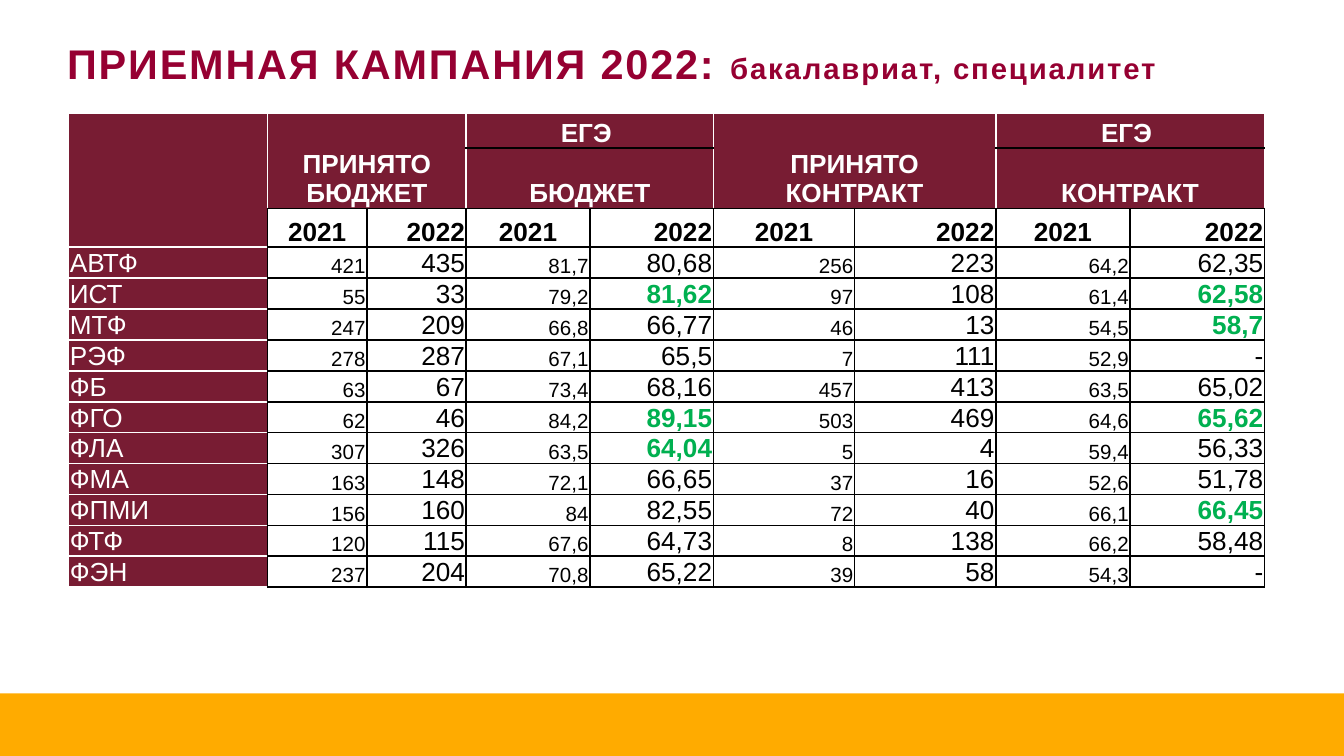
from lxml.etree import SubElement
from pptx import Presentation
from pptx.dml.color import RGBColor
from pptx.enum.shapes import MSO_SHAPE
from pptx.enum.text import MSO_ANCHOR, MSO_AUTO_SIZE, PP_ALIGN
from pptx.oxml.ns import qn
from pptx.util import Inches, Pt

THEME = {
    "font": "Arial",
    "title": RGBColor.from_string("960032"),
    "maroon": RGBColor.from_string("781C33"),
    "bar": RGBColor.from_string("FFAB00"),
    "growth": RGBColor.from_string("00B050"),
    "white": RGBColor.from_string("FFFFFF"),
    "black": RGBColor.from_string("000000"),
    "title_size": Pt(22.2),
    "subtitle_size": Pt(15.7),
    "main_size": Pt(14),
    "previous_size": Pt(11),
}

# top row, left column, bottom row, right column, lines of text
HEADERS = [
    (0, 0, 2, 0, [""]),
    (0, 1, 1, 2, ["ПРИНЯТО БЮДЖЕТ"]),
    (0, 3, 0, 4, ["ЕГЭ "]),
    (1, 3, 1, 4, ["БЮДЖЕТ"]),
    (0, 5, 1, 6, ["ПРИНЯТО", "КОНТРАКТ"]),
    (0, 7, 0, 8, ["ЕГЭ "]),
    (1, 7, 1, 8, ["КОНТРАКТ"]),
]
# * marks a highlighted exam score
FACULTIES = [
    ("АВТФ", "421 435 81,7 80,68 256 223 64,2 62,35"),
    ("ИСТ", "55 33 79,2 *81,62 97 108 61,4 *62,58"),
    ("МТФ", "247 209 66,8 66,77 46 13 54,5 *58,7"),
    ("РЭФ", "278 287 67,1 65,5 7 111 52,9 -"),
    ("ФБ", "63 67 73,4 68,16 457 413 63,5 65,02"),
    ("ФГО", "62 46 84,2 *89,15 503 469 64,6 *65,62"),
    ("ФЛА", "307 326 63,5 *64,04 5 4 59,4 56,33"),
    ("ФМА", "163 148 72,1 66,65 37 16 52,6 51,78"),
    ("ФПМИ", "156 160 84 82,55 72 40 66,1 *66,45"),
    ("ФТФ", "120 115 67,6 64,73 8 138 66,2 58,48"),
    ("ФЭН", "237 204 70,8 65,22 39 58 54,3 -"),
]
COLUMN_WIDTHS = [1.48, 0.74, 0.74, 0.92, 0.92, 1.05, 1.05, 1, 1]
ROW_HEIGHTS = [0.26, 0.45, 0.29] + [0.23] * len(FACULTIES)


def add_styled_run(paragraph, text, size, color, bold=False):
    run = paragraph.add_run()
    run.text = text
    run.font.name = THEME["font"]
    run.font.size = size
    run.font.color.rgb = color
    run.font.bold = bold
    return run


def style_cell(cell, fill=None, borders=("black",) * 4):
    """Set fill, insets and the left, right, top and bottom borders."""
    cell.vertical_anchor = MSO_ANCHOR.BOTTOM
    cell.margin_left = cell.margin_right = cell.margin_top = Inches(0.01)
    cell.margin_bottom = 0
    properties = cell._tc.get_or_add_tcPr()
    for side, color in zip("LRTB", borders):
        line = SubElement(properties, qn(f"a:ln{side}"), w=str(Pt(1)))
        solid = SubElement(line, qn("a:solidFill"))
        SubElement(solid, qn("a:srgbClr"), val=str(THEME[color]))
    if fill is None:
        cell.fill.background()
    else:
        cell.fill.solid()
        cell.fill.fore_color.rgb = fill


prs = Presentation()
prs.slide_width, prs.slide_height = Inches(10), Inches(10 * 9 / 16)
slide = prs.slides.add_slide(prs.slide_layouts[5])

bar_top = Inches(5.16)
bottom_bar = slide.shapes.add_shape(
    MSO_SHAPE.RECTANGLE, 0, bar_top, prs.slide_width, prs.slide_height - bar_top)
bottom_bar.shadow.inherit = False
bottom_bar.fill.solid()
bottom_bar.fill.fore_color.rgb = THEME["bar"]
bottom_bar.line.fill.background()

# Admission table
admissions = slide.shapes.add_table(
    len(ROW_HEIGHTS), len(COLUMN_WIDTHS), Inches(0.51), Inches(0.84),
    Inches(sum(COLUMN_WIDTHS)), Inches(sum(ROW_HEIGHTS))).table
admissions.first_row = admissions.horz_banding = False
for column, width in zip(admissions.columns, COLUMN_WIDTHS):
    column.width = Inches(width)
for row, height in zip(admissions.rows, ROW_HEIGHTS):
    row.height = Inches(height)

for top, left, bottom, right, lines in HEADERS:
    header = admissions.cell(top, left)
    header.merge(admissions.cell(bottom, right))
    style_cell(header, THEME["maroon"], (
        "white", "white",
        "white" if top == 0 else "black",
        "white" if left == 0 else "black"))
    caption = header.text_frame.paragraphs[0]
    caption.alignment = PP_ALIGN.CENTER
    caption.font.size = THEME["main_size"]
    for number, line_text in enumerate(lines):
        if number:
            caption.add_line_break()
        if line_text:
            add_styled_run(caption, line_text, THEME["main_size"], THEME["white"], True)

for col in range(1, len(COLUMN_WIDTHS)):
    year = admissions.cell(2, col)
    style_cell(year)
    caption = year.text_frame.paragraphs[0]
    caption.alignment = PP_ALIGN.CENTER if col % 2 else PP_ALIGN.RIGHT
    add_styled_run(caption, "2021" if col % 2 else "2022",
                   THEME["main_size"], THEME["black"], True)

for row, (faculty, figures) in enumerate(FACULTIES, start=3):
    label = admissions.cell(row, 0)
    style_cell(label, THEME["maroon"], ("white", "black", "white", "white"))
    add_styled_run(label.text_frame.paragraphs[0], faculty,
                   THEME["main_size"], THEME["white"])
    for col, figure in enumerate(figures.split(), start=1):
        value = admissions.cell(row, col)
        style_cell(value)
        paragraph = value.text_frame.paragraphs[0]
        paragraph.alignment = PP_ALIGN.RIGHT
        highlighted = figure.startswith("*")
        add_styled_run(paragraph, figure.lstrip("*"),
                       THEME["previous_size" if col % 2 else "main_size"],
                       THEME["growth" if highlighted else "black"], highlighted)

# Title
title = slide.shapes.title
title.left, title.top = Inches(0.4), Inches(0.08)
title.width, title.height = Inches(8.9), Inches(0.71)
heading = title.text_frame
heading.word_wrap = True
heading.auto_size = MSO_AUTO_SIZE.NONE
heading.vertical_anchor = MSO_ANCHOR.MIDDLE
heading.margin_top = Inches(0.12)
heading.paragraphs[0].alignment = PP_ALIGN.LEFT
for text, size in [("ПРИЕМНАЯ КАМПАНИЯ 2022: ", "title_size"),
                   ("бакалавриат, специалитет", "subtitle_size")]:
    run = add_styled_run(heading.paragraphs[0], text, THEME[size], THEME["title"], True)
    run.font._element.set("spc", "100")

prs.save("out.pptx")
